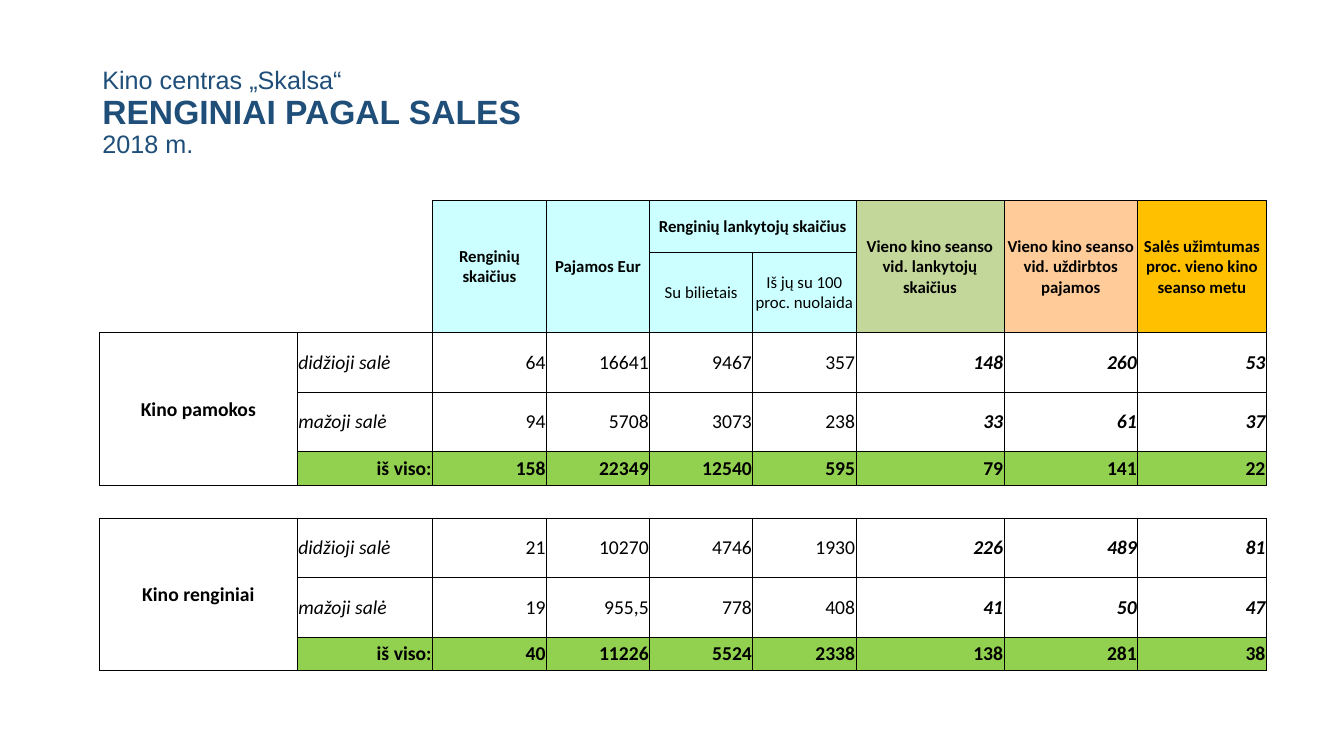
from dataclasses import dataclass

import pptx
import pptx.dml.color
import pptx.enum.text
import pptx.oxml
import pptx.oxml.ns
import pptx.table
import pptx.util
from pptx.util import Cm

Align = pptx.enum.text.PP_ALIGN
Anchor = pptx.enum.text.MSO_ANCHOR

INK = "000000"
NAVY = "1F4E79"
CYAN = "CCFFFF"
GREEN = "92D050"

HALL_HEIGHT = 1.5
TOTAL_HEIGHT = 0.85
GROUP_HEIGHTS = [HALL_HEIGHT, HALL_HEIGHT, TOTAL_HEIGHT]
ROW_HEIGHTS = [1.3, 2.03, *GROUP_HEIGHTS, 0.82, *GROUP_HEIGHTS]
COLUMN_WIDTHS = [5.0, 3.4, 2.87, 2.6, 2.6, 2.6, 3.73, 3.37, 3.24]
GAP_ROW = 5
FIRST_AVERAGE_COLUMN = 6


@dataclass
class Heading:
    text: str
    row: int
    column: int
    color: str
    row_span: int = 1
    column_span: int = 1
    bold: bool = True


@dataclass
class Group:
    name: str
    first_row: int
    rows: list[list[str]]


@dataclass
class TitleLine:
    text: str
    size: int
    bold: bool = False


TITLE = [
    TitleLine("Kino centras „Skalsa“", 18),
    TitleLine("RENGINIAI PAGAL SALES", 24, True),
    TitleLine("2018 m.", 18),
]

HEADINGS = [
    Heading("Renginių skaičius", 0, 2, CYAN, row_span=2),
    Heading("Pajamos Eur", 0, 3, CYAN, row_span=2),
    Heading("Renginių lankytojų skaičius", 0, 4, CYAN, column_span=2),
    Heading("Su bilietais", 1, 4, CYAN, bold=False),
    Heading("Iš jų su 100 proc. nuolaida", 1, 5, CYAN, bold=False),
    Heading("Vieno kino seanso vid. lankytojų skaičius", 0, 6, "C4D79B", row_span=2),
    Heading("Vieno kino seanso vid. uždirbtos pajamos", 0, 7, "FFCC99", row_span=2),
    Heading("Salės užimtumas proc. vieno kino seanso metu", 0, 8, "FFC000", row_span=2),
]

GROUPS = [
    Group("Kino pamokos", 2, [
        ["didžioji salė", "64", "16641", "9467", "357", "148", "260", "53"],
        ["mažoji salė", "94", "5708", "3073", "238", "33", "61", "37"],
        ["iš viso:", "158", "22349", "12540", "595", "79", "141", "22"],
    ]),
    Group("Kino renginiai", 6, [
        ["didžioji salė", "21", "10270", "4746", "1930", "226", "489", "81"],
        ["mažoji salė", "19", "955,5", "778", "408", "41", "50", "47"],
        ["iš viso:", "40", "11226", "5524", "2338", "138", "281", "38"],
    ]),
]


def rgb(color: str) -> pptx.dml.color.RGBColor:
    return pptx.dml.color.RGBColor.from_string(color)


def format_span(span, font: str, size: int, color: str, bold: bool, italic: bool = False) -> None:
    span.font.name = font
    span.font.size = pptx.util.Pt(size)
    span.font.color.rgb = rgb(color)
    span.font.bold = bold
    span.font.italic = italic


def add_title(slide) -> None:
    box = slide.shapes.add_textbox(Cm(2.33), Cm(1.02), Cm(29.2), Cm(3.68))
    frame = box.text_frame
    frame.word_wrap = True
    frame.vertical_anchor = Anchor.MIDDLE
    para = frame.paragraphs[0]
    para.text = "\n".join(line.text for line in TITLE)
    para.line_spacing = 0.9
    for span, line in zip(para.runs, TITLE):
        format_span(span, "Arial", line.size, NAVY, line.bold)


def is_ruled(row: int, column: int) -> bool:
    if not (0 <= row < len(ROW_HEIGHTS) and 0 <= column < len(COLUMN_WIDTHS)):
        return False
    return row != GAP_ROW and (row > 1 or column > 1)


def draw_borders(cell: pptx.table._Cell, row: int, column: int) -> None:
    neighbours = {
        "lnL": (row, column - 1),
        "lnR": (row, column + 1),
        "lnT": (row - 1, column),
        "lnB": (row + 1, column),
    }
    properties = cell._tc.get_or_add_tcPr()
    for side, neighbour in neighbours.items():
        ruled = is_ruled(row, column) or is_ruled(*neighbour)
        paint = f'<a:solidFill><a:srgbClr val="{INK}"/></a:solidFill>' if ruled else "<a:noFill/>"
        properties.append(pptx.oxml.parse_xml(
            f'<a:{side} {pptx.oxml.ns.nsdecls("a")} w="6350">{paint}</a:{side}>'
        ))


def prepare_cells(table: pptx.table.Table) -> None:
    for row in range(len(ROW_HEIGHTS)):
        for column in range(len(COLUMN_WIDTHS)):
            cell = table.cell(row, column)
            cell.margin_left = cell.margin_right = cell.margin_top = Cm(0.02)
            cell.margin_bottom = Cm(0)
            cell.vertical_anchor = Anchor.MIDDLE
            draw_borders(cell, row, column)
            cell.fill.background()


def write_cell(cell: pptx.table._Cell, text: str, align: Align, size: int,
               bold: bool = False, italic: bool = False, color: str | None = None) -> None:
    cell.text_frame.text = text
    para = cell.text_frame.paragraphs[0]
    para.alignment = align
    format_span(para.runs[0], "Calibri", size, INK, bold, italic)
    if color:
        cell.fill.solid()
        cell.fill.fore_color.rgb = rgb(color)


def write_heading(table: pptx.table.Table, heading: Heading) -> None:
    cell = table.cell(heading.row, heading.column)
    if heading.row_span > 1 or heading.column_span > 1:
        cell.merge(table.cell(heading.row + heading.row_span - 1,
                              heading.column + heading.column_span - 1))
    write_cell(cell, heading.text, Align.CENTER, 12, heading.bold, color=heading.color)


def write_group(table: pptx.table.Table, group: Group) -> None:
    last = len(group.rows) - 1
    name_cell = table.cell(group.first_row, 0)
    name_cell.merge(table.cell(group.first_row + last, 0))
    write_cell(name_cell, group.name, Align.CENTER, 14, bold=True)
    for offset, values in enumerate(group.rows):
        total = offset == last
        for column, text in enumerate(values, start=1):
            label = column == 1
            average = column >= FIRST_AVERAGE_COLUMN
            write_cell(
                table.cell(group.first_row + offset, column), text,
                Align.LEFT if label and not total else Align.RIGHT, 14,
                bold=total or average,
                italic=not total and (label or average),
                color=GREEN if total else None,
            )


def add_hall_table(slide) -> None:
    table = slide.shapes.add_table(
        len(ROW_HEIGHTS), len(COLUMN_WIDTHS), Cm(2.5), Cm(5.05),
        Cm(sum(COLUMN_WIDTHS)), Cm(sum(ROW_HEIGHTS)),
    ).table
    table.first_row = False
    table.horz_banding = False
    for column, width in zip(table.columns, COLUMN_WIDTHS):
        column.width = Cm(width)
    for row, height in zip(table.rows, ROW_HEIGHTS):
        row.height = Cm(height)
    prepare_cells(table)
    for heading in HEADINGS:
        write_heading(table, heading)
    for group in GROUPS:
        write_group(table, group)


def main() -> None:
    deck = pptx.Presentation()
    deck.slide_width = Cm(33.87)
    deck.slide_height = Cm(19.05)
    page = deck.slides.add_slide(deck.slide_layouts[6])
    add_title(page)
    add_hall_table(page)
    deck.save("out.pptx")


if __name__ == "__main__":
    main()
